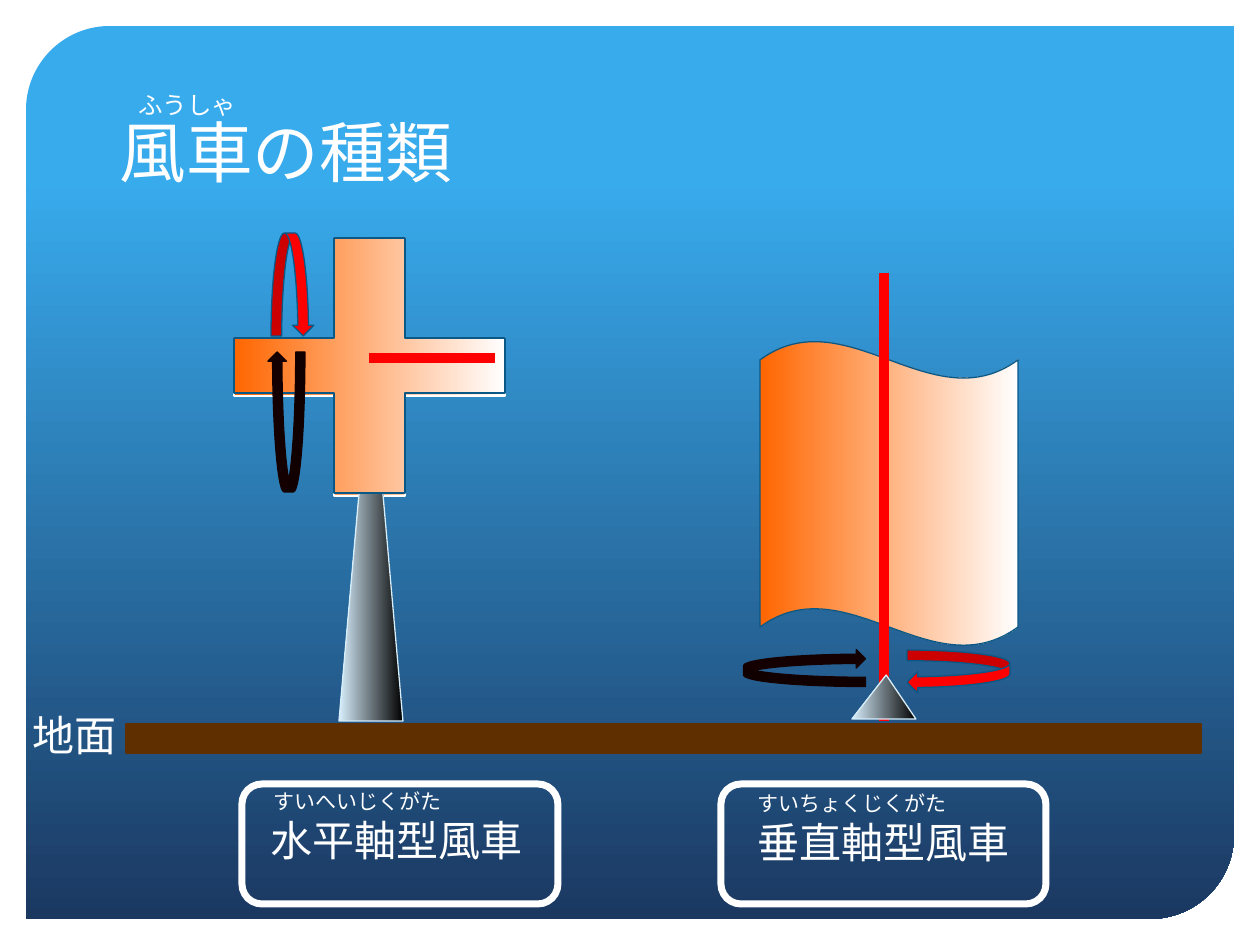
from dataclasses import dataclass
from typing import NamedTuple

from lxml import etree
from pptx import Presentation
from pptx.dml.color import RGBColor
from pptx.enum import shapes as sh, text as tx
from pptx.oxml.ns import qn
from pptx.util import Pt

EMU_PER_PX = 914400 / 126


@dataclass(frozen=True)
class Theme:
    font: str = "Karla"
    white: str = "FFFFFF"
    red: str = "FF0000"
    dark: str = "140000"
    outline: str = "095886"
    soil: str = "602F00"
    pale: str = "D7EEFB"
    sky: tuple = ((17, "38ABED"), (100, "1B3861"))
    blade: tuple = ((0, "FF6600"), (100, "FFFFFF"))
    metal: tuple = ((0, "D7EEFB"), (100, "000000"))
    title_size: int = 38
    label_size: int = 24
    title_ruby: int = 14
    label_ruby: int = 12
    hairline: float = 0.75
    frame_width: float = 4
    axis_width: float = 5.75


class Box(NamedTuple):
    left: int
    top: int
    width: int
    height: int


@dataclass(frozen=True)
class Part:
    kind: sh.MSO_SHAPE
    box: Box
    fill: str | tuple | None = None
    line: str | None = None
    weight: float = Theme.hairline
    adjust: tuple = ()
    angle: float = 0
    rotation: int = 0
    mirrored: bool = False


@dataclass(frozen=True)
class Label:
    words: str
    box: Box
    size: int


THEME = Theme()
KIND = sh.MSO_SHAPE


def px(length: int) -> int:
    return round(length * EMU_PER_PX)


def rgb(colour: str) -> RGBColor:
    return RGBColor.from_string(colour)


def draw_part(slide, part: Part):
    shape = slide.shapes.add_shape(part.kind, *map(px, part.box))
    shape.shadow.inherit = False
    for index, value in enumerate(part.adjust):
        shape.adjustments[index] = value
    if part.fill is None:
        shape.fill.background()
    elif isinstance(part.fill, str):
        shape.fill.solid()
        shape.fill.fore_color.rgb = rgb(part.fill)
    else:
        shape.fill.gradient()
        shape.fill.gradient_angle = part.angle
        for stop, (position, colour) in zip(shape.fill.gradient_stops, part.fill):
            stop.position = position / 100
            stop.color.rgb = rgb(colour)
    if part.line is None:
        shape.line.fill.background()
    else:
        shape.line.color.rgb = rgb(part.line)
        shape.line.width = Pt(part.weight)
    shape.rotation = part.rotation
    if part.mirrored:
        shape._element.spPr.get_or_add_xfrm().set("flipH", "1")
    return shape


def draw_axis(slide, start: tuple[int, int], end: tuple[int, int]) -> None:
    axis = slide.shapes.add_connector(sh.MSO_CONNECTOR.STRAIGHT, *map(px, start + end))
    axis.line.color.rgb = rgb(THEME.red)
    axis.line.width = Pt(THEME.axis_width)
    etree.SubElement(axis._element.spPr, qn("a:effectLst"))


def write(frame, words: str, size: int) -> None:
    frame.text = words
    frame.word_wrap = True
    paragraph = frame.paragraphs[0]
    paragraph.alignment = tx.PP_ALIGN.LEFT
    paragraph.font.name = THEME.font
    paragraph.font.size = Pt(size)
    paragraph.font.color.rgb = rgb(THEME.white)


def draw_label(slide, label: Label) -> None:
    frame = slide.shapes.add_textbox(*map(px, label.box)).text_frame
    write(frame, label.words, label.size)
    frame.auto_size = tx.MSO_AUTO_SIZE.SHAPE_TO_FIT_TEXT


def rotor(top: int, line: str) -> Part:
    return Part(KIND.CROSS, Box(234, top, 271, 255), THEME.blade, line, adjust=(0.392,))


def near_arrow(box: Box, rotation: int = 0) -> Part:
    return Part(KIND.CURVED_DOWN_ARROW, box, THEME.red, THEME.outline, rotation=rotation)


def far_arrow(box: Box, rotation: int = 0) -> Part:
    return Part(KIND.CURVED_UP_ARROW, box, THEME.dark, THEME.dark,
                rotation=rotation, mirrored=True)


def name_frame(box: Box) -> Part:
    return Part(KIND.ROUNDED_RECTANGLE, box, None, THEME.white, THEME.frame_width)


PANEL = Part(KIND.ROUND_2_DIAG_RECTANGLE, Box(26, 26, 1208, 893), THEME.sky,
             adjust=(0.094, 0), angle=270)
BACK_ROTORS = [rotor(238, THEME.white), rotor(241, THEME.white)]
MILLS = [
    Part(KIND.ISOSCELES_TRIANGLE, Box(339, 358, 64, 363), THEME.metal, THEME.pale),
    rotor(238, THEME.outline),
    Part(KIND.WAVE, Box(760, 341, 258, 305), THEME.blade, THEME.outline, adjust=(0.062, 0)),
]
AXES = [((884, 273), (884, 721)), ((369, 358), (495, 358))]
FOREGROUND = [
    name_frame(Box(242, 784, 316, 120)),
    name_frame(Box(721, 784, 325, 120)),
    far_arrow(Box(268, 352, 37, 140)),
    near_arrow(Box(271, 233, 43, 103)),
    far_arrow(Box(786, 607, 37, 122), 90),
    near_arrow(Box(937, 620, 43, 103), 90),
    Part(KIND.RECTANGLE, Box(126, 724, 1075, 29), THEME.soil, THEME.soil),
    Part(KIND.ISOSCELES_TRIANGLE, Box(852, 675, 64, 44), THEME.metal, THEME.pale,
         adjust=(0.535,)),
]
LABELS = [
    Label("水平軸型風車", Box(258, 808, 284, 63), THEME.label_size),
    Label("垂直軸型風車", Box(745, 810, 281, 63), THEME.label_size),
    Label("地面", Box(20, 703, 132, 63), THEME.label_size),
    Label("ふうしゃ", Box(126, 84, 137, 43), THEME.title_ruby),
    Label("すいへいじくがた", Box(261, 782, 246, 38), THEME.label_ruby),
    Label("すいちょくじくがた", Box(745, 784, 246, 38), THEME.label_ruby),
]


def main() -> None:
    deck = Presentation()
    deck.slide_width, deck.slide_height = px(1260), px(945)
    slide = deck.slides.add_slide(deck.slide_layouts.get_by_name("Title Only"))

    title = slide.shapes.title
    title.left, title.top, title.width, title.height = map(px, Box(107, 53, 1045, 144))
    write(title.text_frame, "風車の種類", THEME.title_size)
    title.text_frame.vertical_anchor = tx.MSO_ANCHOR.BOTTOM
    title.text_frame.auto_size = tx.MSO_AUTO_SIZE.NONE

    for part in [PANEL, *BACK_ROTORS]:
        title._element.addprevious(draw_part(slide, part)._element)
    for part in MILLS:
        draw_part(slide, part)
    for start, end in AXES:
        draw_axis(slide, start, end)
    for part in FOREGROUND:
        draw_part(slide, part)
    for label in LABELS:
        draw_label(slide, label)

    deck.save("out.pptx")


if __name__ == "__main__":
    main()
